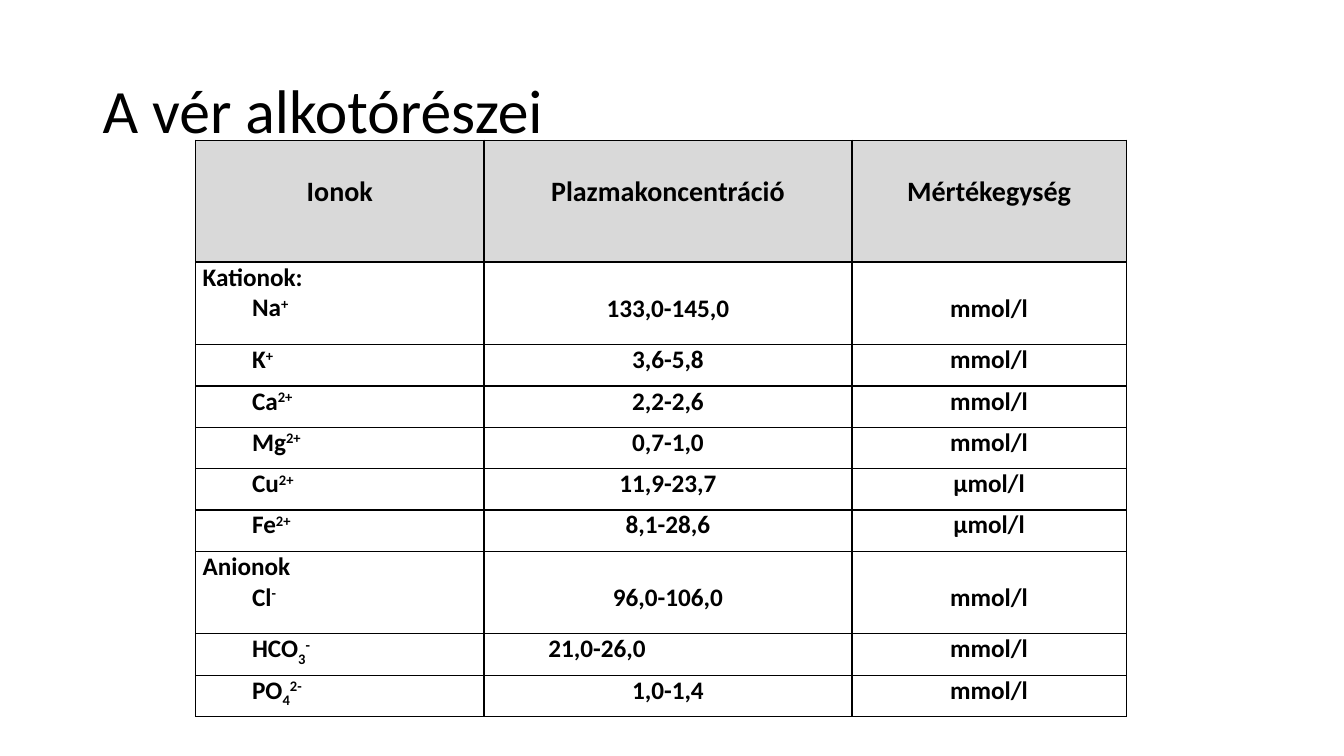
import pptx
import pptx.util
import pptx.dml.color
import pptx.enum.text
import pptx.oxml
import pptx.oxml.ns

Inches, Pt = pptx.util.Inches, pptx.util.Pt
RGBColor = pptx.dml.color.RGBColor
ALIGN = pptx.enum.text.PP_ALIGN
ANCHOR = pptx.enum.text.MSO_ANCHOR

# Content
TITLE = "A vér alkotórészei"
HEADS = ["Ionok", "Plazmakoncentráció", "Mértékegység"]
# group, ion, subscript, charge, plasma level, unit
IONS = [
    ("Kationok:", "Na", "", "+", "133,0-145,0", "mmol/l"),
    ("", "K", "", "+", "3,6-5,8", "mmol/l"),
    ("", "Ca", "", "2+", "2,2-2,6", "mmol/l"),
    ("", "Mg", "", "2+", "0,7-1,0", "mmol/l"),
    ("", "Cu", "", "2+", "11,9-23,7", "µmol/l"),
    ("", "Fe", "", "2+", "8,1-28,6", "µmol/l"),
    ("Anionok", "Cl", "", "-", "96,0-106,0", "mmol/l"),
    ("", "HCO", "3", "-", "21,0-26,0", "mmol/l"),
    ("", "PO", "4", "2-", "1,0-1,4", "mmol/l"),
]
LEFT_ION = "HCO"  # its level is set from the left

# Style
FONT = "Calibri"
BLACK = RGBColor(0x00, 0x00, 0x00)
GREY = RGBColor(0xD9, 0xD9, 0xD9)
COLS = [2.86, 3.65, 2.72]
HEAD_H, ROW_H = 1.21, 0.41
HEAD_TOP, GROUP_TOP = 0.34, 0.31  # one line of text
ION_IN, LEFT_IN = 0.49, 0.57
SUB, SUP = -25000, 30000


def write(para, text, size=18, bold=True, align=ALIGN.CENTER, indent=0, base=0):
    para.alignment = align
    if indent:
        props = para._p.get_or_add_pPr()
        props.set("marL", str(Inches(indent)))
        props.set("indent", "0")
    run = para.add_run()
    run.text = text
    font = run.font
    font.name, font.size, font.bold = FONT, Pt(size), bold
    font.color.rgb = BLACK
    if base:
        run._r.get_or_add_rPr().set("baseline", str(base))


def frame(cell, fill=None, top=0):
    cell.margin_left = cell.margin_right = Inches(0.07)
    cell.margin_top, cell.margin_bottom = Inches(top), 0
    if fill is None:
        cell.fill.background()
    else:
        cell.fill.solid()
        cell.fill.fore_color.rgb = fill
    props = cell._tc.get_or_add_tcPr()
    for i, side in enumerate("LRTB"):
        props.insert(i, pptx.oxml.parse_xml(
            f'<a:ln{side} {pptx.oxml.ns.nsdecls("a")} w="{Pt(1)}">'
            f'<a:solidFill><a:srgbClr val="{BLACK}"/></a:solidFill></a:ln{side}>'))


prs = pptx.Presentation()
prs.slide_width, prs.slide_height = Inches(13.33), Inches(7.5)
slide = prs.slides.add_slide(prs.slide_layouts[6])

# Title
box = slide.shapes.add_textbox(Inches(0.92), Inches(0.4), Inches(11.5), Inches(1.45))
text = box.text_frame
text.word_wrap = True
text.vertical_anchor = ANCHOR.MIDDLE
text.paragraphs[0].line_spacing = 0.9
write(text.paragraphs[0], TITLE, size=44, bold=False, align=ALIGN.LEFT)

# Table grid
highs = [HEAD_H] + [ROW_H * (2 if ion[0] else 1) for ion in IONS]
table = slide.shapes.add_table(
    len(highs), len(COLS), Inches(1.94), Inches(1.39),
    Inches(sum(COLS)), Inches(sum(highs))).table
table.first_row = table.horz_banding = False
for col, wide in zip(table.columns, COLS):
    col.width = Inches(wide)
for row, high in zip(table.rows, highs):
    row.height = Inches(high)

# Header row
for c, head in enumerate(HEADS):
    cell = table.cell(0, c)
    frame(cell, fill=GREY, top=HEAD_TOP)
    write(cell.text_frame.paragraphs[0], head, size=20)

# Ion rows
for r, (group, ion, sub, charge, level, unit) in enumerate(IONS, 1):
    name, mid, last = table.rows[r].cells
    top = GROUP_TOP if group else 0
    frame(name)
    frame(mid, top=top)
    frame(last, top=top)

    para = name.text_frame.paragraphs[0]
    if group:
        write(para, group, align=ALIGN.JUSTIFY)
        para = name.text_frame.add_paragraph()
    for part, base in ((ion, 0), (sub, SUB), (charge, SUP)):
        if part:
            write(para, part, align=ALIGN.LEFT, indent=ION_IN, base=base)

    if ion == LEFT_ION:
        write(mid.text_frame.paragraphs[0], level, align=ALIGN.LEFT, indent=LEFT_IN)
    else:
        write(mid.text_frame.paragraphs[0], level)
    write(last.text_frame.paragraphs[0], unit)

prs.save("out.pptx")
